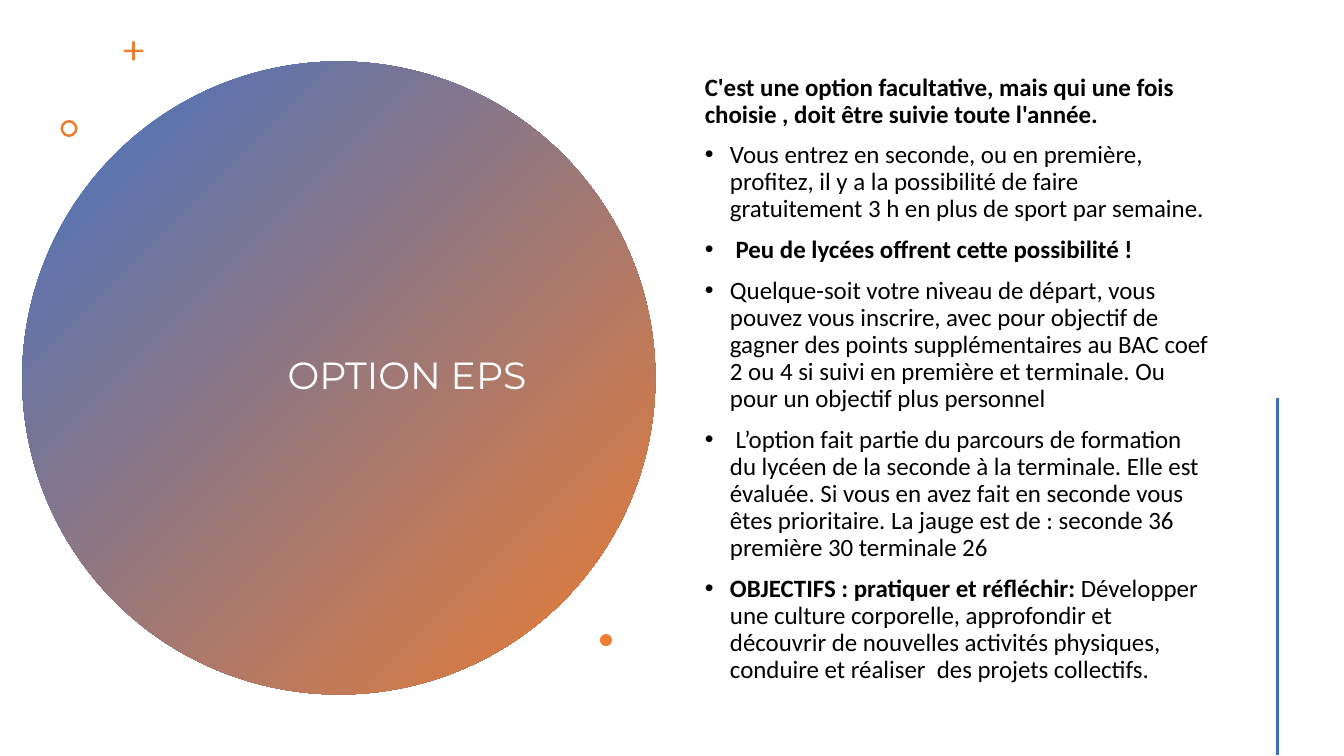
"""Build the slide that presents the EPS option."""
from lxml import etree
from pptx import Presentation
from pptx import util as u
from pptx.dml import color
from pptx.enum import shapes, text
from pptx.oxml import ns

HUES = {"blue": "4472C4", "orange": "ED7D31", "line": "3F6EC2",
        "white": "FFFFFF", "black": "000000"}
KIND = shapes.MSO_SHAPE


def tint(name):
    return color.RGBColor.from_string(HUES[name])


def style(item, form):
    for key, val in form.items():
        setattr(item, key, val)


deck = Presentation()
deck.slide_width, deck.slide_height = u.Inches(13.33), u.Inches(7.5)
slide = deck.slides.add_slide(deck.slide_layouts[1])
title, body = slide.placeholders
tree = slide.shapes

marks = [
    (KIND.OVAL, 0.22, 0.61, 6.28, None),
    (KIND.CROSS, 1.23, 0.41, 0.19, 0.43),
    (KIND.DONUT, 0.6, 1.19, 0.17, 0.15),
    (KIND.OVAL, 5.95, 6.29, 0.12, None),
]
drawn = []
for kind, left, top, size, ratio in marks:
    mark = tree.add_shape(kind, *map(u.Inches, (left, top, size, size)))
    mark.shadow.inherit = False
    mark.line.fill.background()
    mark.fill.solid()
    mark.fill.fore_color.rgb = tint("orange")
    if ratio:
        mark.adjustments[0] = ratio
    drawn.append(mark)

disc = drawn[0]
disc.fill.gradient()
disc.fill.gradient_angle = 315
for stop, name in zip(disc.fill.gradient_stops, ("blue", "orange")):
    stop.color.rgb = tint(name)
tree._spTree.insert(2, disc._element)

frame = {"word_wrap": True, "auto_size": text.MSO_AUTO_SIZE.NONE,
         "vertical_anchor": text.MSO_ANCHOR.MIDDLE}
boxes = [(title, 1.36, 1.41, 3.99, 4.67), (body, 6.89, 0.57, 5.22, 6.38)]
for box, *spot in boxes:
    style(box, dict(zip(("left", "top", "width", "height"), map(u.Inches, spot))))
    style(box.text_frame, frame)

title.text_frame.margin_right = u.Inches(0.13)
head = title.text_frame.paragraphs[0]
style(head, {"text": "OPTION EPS", "alignment": text.PP_ALIGN.RIGHT, "line_spacing": 0.9})
style(head.runs[0].font, {"name": "Montserrat", "size": u.Pt(27)})
head.runs[0].font.color.rgb = tint("white")

items = [
    [("C'est une option facultative, mais qui une fois choisie , "
      "doit être suivie toute l'année.", True)],
    [("Vous entrez en seconde, ou en première, profitez, il y a la possibilité "
      "de faire gratuitement 3 h en plus de sport par semaine.", False)],
    [(" ", False), ("Peu de lycées offrent cette possibilité ! ", True)],
    [("Quelque-soit votre niveau de départ, vous pouvez vous inscrire, avec pour "
      "objectif de gagner des points supplémentaires au BAC coef 2 ou 4 si suivi "
      "en première et terminale. Ou pour un objectif plus personnel", False)],
    [(" L’option fait partie du parcours de formation du lycéen de la seconde à la "
      "terminale. Elle est évaluée. Si vous en avez fait en seconde vous êtes "
      "prioritaire. La jauge est de : seconde 36 première 30 terminale 26", False)],
    [("OBJECTIFS : pratiquer et réfléchir: ", True),
     ("Développer une culture corporelle, approfondir et découvrir de nouvelles "
      "activités physiques, conduire et réaliser  des projets collectifs.", False)],
]
for rank, parts in enumerate(items):
    para = body.text_frame.add_paragraph() if rank else body.text_frame.paragraphs[0]
    style(para, {"line_spacing": 0.9, "space_before": u.Pt(10)})
    props = para._p.get_or_add_pPr()
    inset = u.Inches(0.25) if rank else 0
    props.set("marL", str(inset))
    props.set("indent", str(-inset))
    if rank:
        etree.SubElement(props, ns.qn("a:buChar")).set("char", "•")
    else:
        etree.SubElement(props, ns.qn("a:buNone"))
    for words, bold in parts:
        run = para.add_run()
        run.text = words
        style(run.font, {"name": "Calibri", "size": u.Pt(17.8), "bold": bold})
        run.font.color.rgb = tint("black")

rule = tree.add_connector(shapes.MSO_CONNECTOR.STRAIGHT,
                          *map(u.Inches, (12.67, 3.95, 12.67, 7.49)))
rule.line.width = u.Pt(2)
rule.line.color.rgb = tint("line")
etree.SubElement(rule._element.spPr, ns.qn("a:effectLst"))

deck.save("out.pptx")
